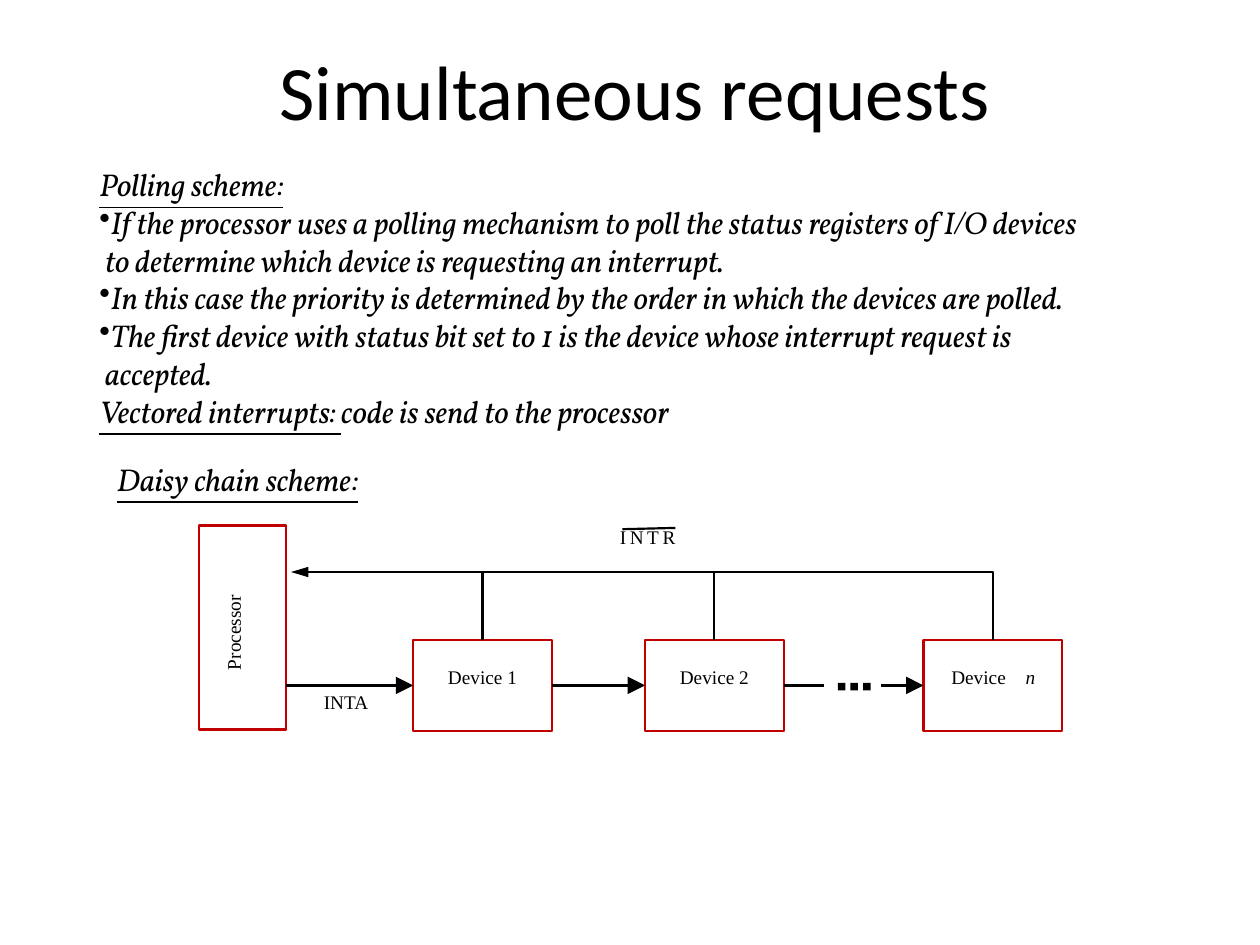
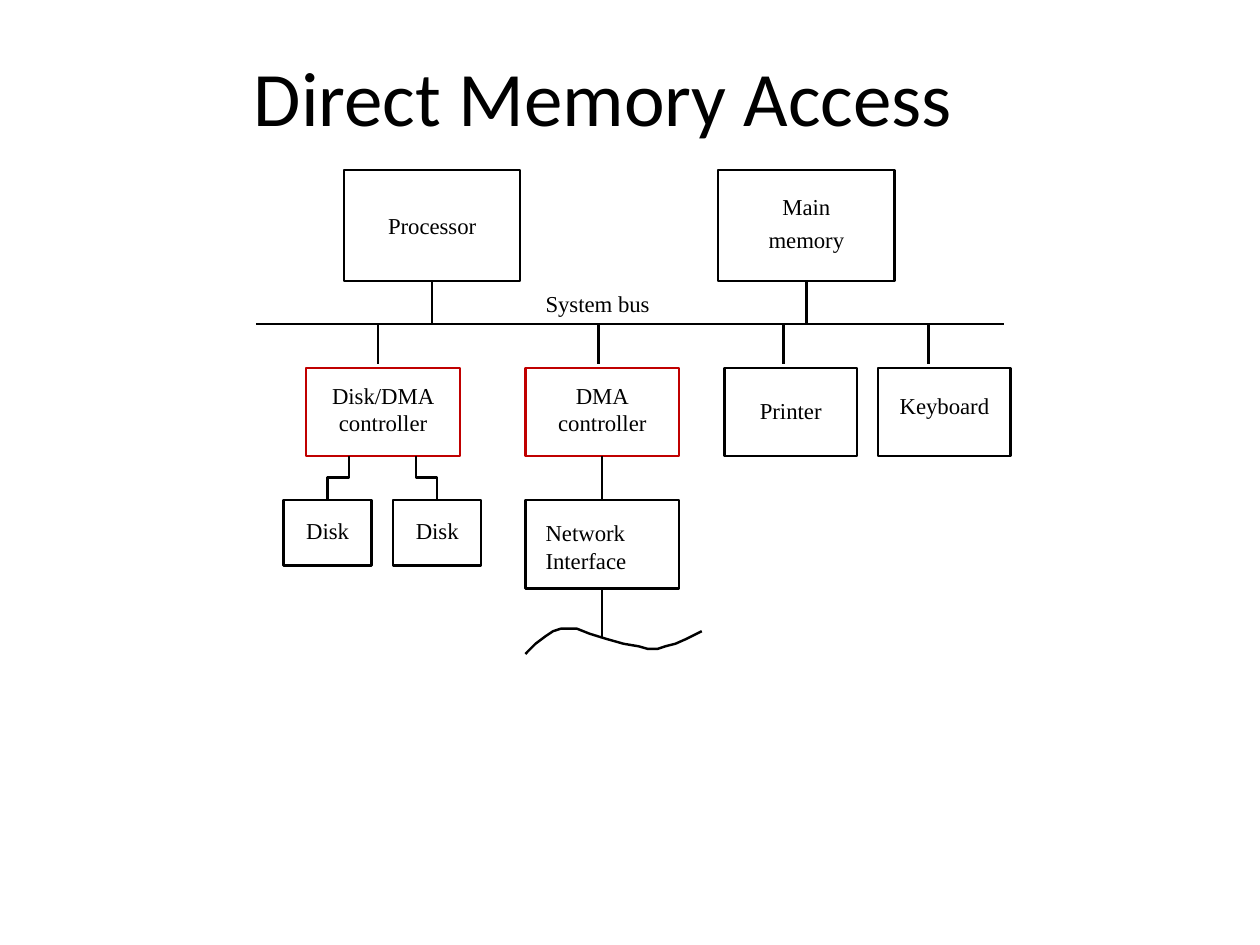
"""Build two slides on interrupt requests and direct memory access."""
from dataclasses import dataclass
from lxml.etree import SubElement as Sub
from pptx import Presentation
from pptx.dml.color import RGBColor as RGB
from pptx.enum.shapes import MSO_CONNECTOR as Conn, MSO_SHAPE as Form
from pptx.enum.text import MSO_ANCHOR as Anchor, PP_ALIGN as Align
from pptx.oxml.ns import qn
from pptx.util import Inches, Pt


@dataclass(frozen=True)
class Theme:
    black: RGB = RGB(0, 0, 0)
    red: RGB = RGB(0xC0, 0, 0)
    head: str = "Calibri"
    body: str = "Vollkorn"
    mark: str = "Times New Roman"
    title: float = 44
    text: float = 18
    chain: float = 11
    bus: float = 13
    thin: float = 1.25
    line: float = 1.38
    thick: float = 1.5


theme = Theme()


def put(slide, at, lines, size, font=theme.mark, edge=None, width=theme.line,
        top=0, left=0, gap=0, align=Align.LEFT):
    """Add lines of text, inside a rectangle when an edge colour is given."""
    place = [Inches(v) for v in at]
    if edge is None:
        shape = slide.shapes.add_textbox(*place)
    else:
        shape = slide.shapes.add_shape(Form.RECTANGLE, *place)
        shape.shadow.inherit = False
        shape.fill.background()
        shape.line.color.rgb = edge
        shape.line.width = Pt(width)
    frame = shape.text_frame
    frame.word_wrap = True
    frame.vertical_anchor = Anchor.TOP
    frame.margin_left, frame.margin_top = Inches(left), Inches(top)
    frame.margin_right = frame.margin_bottom = 0
    for i, line in enumerate(lines):
        para = frame.paragraphs[0] if i == 0 else frame.add_paragraph()
        para.text = line
        para.alignment = align
        para.space_before = Pt(gap if i else 0)
        para.font.size, para.font.name = Pt(size), font
        para.font.color.rgb = theme.black
    return shape


def wire(slide, points, width=theme.line, arrow=None):
    """Draw a connector through two points, or an open outline through more."""
    spots = [(Inches(x), Inches(y)) for x, y in points]
    if len(spots) == 2:
        shape = slide.shapes.add_connector(Conn.STRAIGHT, *spots[0], *spots[1])
    else:
        path = slide.shapes.build_freeform(*spots[0], scale=1.0)
        path.add_line_segments(spots[1:], close=False)
        shape = path.convert_to_shape()
        shape.shadow.inherit = False
        shape.fill.background()
    shape.line.color.rgb = theme.black
    shape.line.width = Pt(width)
    if arrow:
        Sub(shape.line._get_or_add_ln(), qn("a:tailEnd"), type="triangle", w=arrow, len="lg")
    if len(spots) == 2:
        Sub(shape._element.spPr, qn("a:effectLst"))
    return shape


deck = Presentation()
deck.slide_width, deck.slide_height = Inches(10), Inches(7.5)
slides = []
for name, at in (("Simultaneous requests", (0.5, 0.25, 9.08, 0.92)),
                 ("Direct Memory Access", (0.25, 0.25, 9.08, 1.02))):
    page = deck.slides.add_slide(deck.slide_layouts[6])
    title = put(page, at, [name], theme.title, theme.head, align=Align.CENTER)
    title.text_frame.vertical_anchor = Anchor.MIDDLE
    slides.append(page)
poll, dma = slides

notes = put(poll, (0.69, 1.26, 9.09, 2.22), [
    "Polling scheme:",
    "If the processor uses a polling mechanism to poll the status registers of I/O devices",
    " to determine which device is requesting an interrupt.",
    "In this case the priority is determined by the order in which the devices are polled.",
    "The first device with status bit set to 1 is the device whose interrupt request is",
    " accepted.",
    "Vectored interrupts: ",
], theme.text, theme.body, top=0.05, left=0.1)
daisy = put(poll, (0.83, 3.6, 2.28, 0.4), ["Daisy chain scheme:"],
            theme.text, theme.body, top=0.05, left=0.1)
paras = notes.text_frame.paragraphs
for para in (*paras, *daisy.text_frame.paragraphs):
    para.font.italic = True
for para in (paras[0], paras[6], daisy.text_frame.paragraphs[0]):
    para.runs[0].font.underline = True
paras[6].add_run().text = "code is send to the processor"
for i in (1, 3, 4):
    Sub(paras[i]._p.get_or_add_pPr(), qn("a:buChar"), char="•")

put(poll, (1.58, 4.17, 0.69, 1.62), [], theme.chain, edge=theme.red, width=theme.thin)
side = put(poll, (1.35, 4.93, 1, 0.18), ["Processor"], theme.chain, align=Align.CENTER)
side.rotation = 270

wide, mid, rail = 1.1, 5.44, 4.54
units = []
for x, name in ((3.28, ["Device 1"]), (5.12, ["Device 2"]), (7.33, [])):
    unit = put(poll, (x, 5.08, wide, 0.72), name, theme.chain, edge=theme.red,
               width=theme.thin, top=0.2, align=Align.CENTER)
    units.append(unit)
    if name:
        stem = x + wide / 2
        wire(poll, [(stem, rail), (stem, 5.08)], theme.thin).end_connect(unit, 0)
wire(poll, [(7.88, 5.08), (7.88, rail), (2.31, rail)], theme.thin, "med")

first, second, last = units
for start, end, tail, tip in ((2.27, 3.28, None, first), (4.38, 5.12, first, second),
                              (6.22, 6.54, second, None), (6.99, 7.33, None, last)):
    link = wire(poll, [(start, mid), (end, mid)], theme.thin, "lg" if tip else None)
    if tail:
        link.begin_connect(tail, 3)
    if tip:
        link.end_connect(tip, 1)
for i in range(3):
    dot = put(poll, (6.65 + 0.1 * i, 5.42, 0.06, 0.06), [], theme.chain, edge=theme.black)
    dot.fill.solid()
    dot.fill.fore_color.rgb = theme.black
    dot.line.fill.background()

for x, y, word in ((2.57, 5.48, "INTA"), (4.92, 4.17, "INTR"),
                   (7.55, 5.28, "Device"), (8.14, 5.28, "n")):
    tag = put(poll, (x, y, 0.6, 0.2), [word], theme.chain)
    run = tag.text_frame.paragraphs[0].runs[0]
    if word == "INTR":
        run._r.get_or_add_rPr().set("spc", "200")
    if word == "n":
        run.font.italic = True
wire(poll, [(4.94, 4.2), (5.36, 4.19)], theme.thin)

bus = 2.57
wire(dma, [(2.03, bus), (7.97, bus)])
put(dma, (4.33, 2.3, 0.95, 0.22), ["System bus"], theme.bus)
for x, lines, top in ((2.73, ["Processor"], 0.33), (5.7, ["Main", "memory"], 0.18)):
    box = put(dma, (x, 1.35, 1.4, 0.88), lines, theme.bus, edge=theme.black,
              top=top, gap=3, align=Align.CENTER)
    wire(dma, [(x + 0.7, 2.23), (x + 0.7, bus)]).begin_connect(box, 2)

cards = {}
for x, wide, drop, lines, top, edge in (
        (2.43, 1.22, 3, ["Disk/DMA", "controller"], 0.11, theme.red),
        (4.17, 1.22, 4.75, ["DMA", "controller"], 0.11, theme.red),
        (5.75, 1.05, 6.22, ["Printer"], 0.23, theme.black),
        (6.97, 1.05, 7.37, ["Keyboard"], 0.19, theme.black)):
    cards[lines[0]] = put(dma, (x, 2.92, wide, 0.7), lines, theme.bus, edge=edge, top=top,
                          width=theme.thick if edge == theme.red else theme.line,
                          align=Align.CENTER)
    wire(dma, [(drop, bus), (drop, 2.89)])

for x, port in ((2.25, 2.77), (3.12, 3.3)):
    put(dma, (x, 3.97, 0.7, 0.52), ["Disk"], theme.bus, edge=theme.black,
        top=0.13, align=Align.CENTER)
    hub = x + 0.35
    wire(dma, [(hub, 3.97), (hub, 3.79), (port, 3.79), (port, 3.62)])

net = put(dma, (4.17, 3.97, 1.22, 0.7), ["Network", "Interface"], theme.bus,
          edge=theme.black, top=0.15, left=0.16)
down = wire(dma, [(4.78, 3.62), (4.78, 3.97)])
down.begin_connect(cards["DMA"], 2)
down.end_connect(net, 0)
wire(dma, [(4.78, 4.67), (4.78, 5.06)]).begin_connect(net, 2)
wire(dma, [(4.17, 5.19), (4.25, 5.11), (4.33, 5.05), (4.39, 5.01), (4.45, 4.99),
           (4.58, 4.99), (4.68, 5.03), (4.81, 5.07), (4.95, 5.11), (5.07, 5.13),
           (5.14, 5.15), (5.22, 5.15), (5.28, 5.13), (5.36, 5.11), (5.45, 5.07),
           (5.57, 5.01)])

deck.save("out.pptx")
